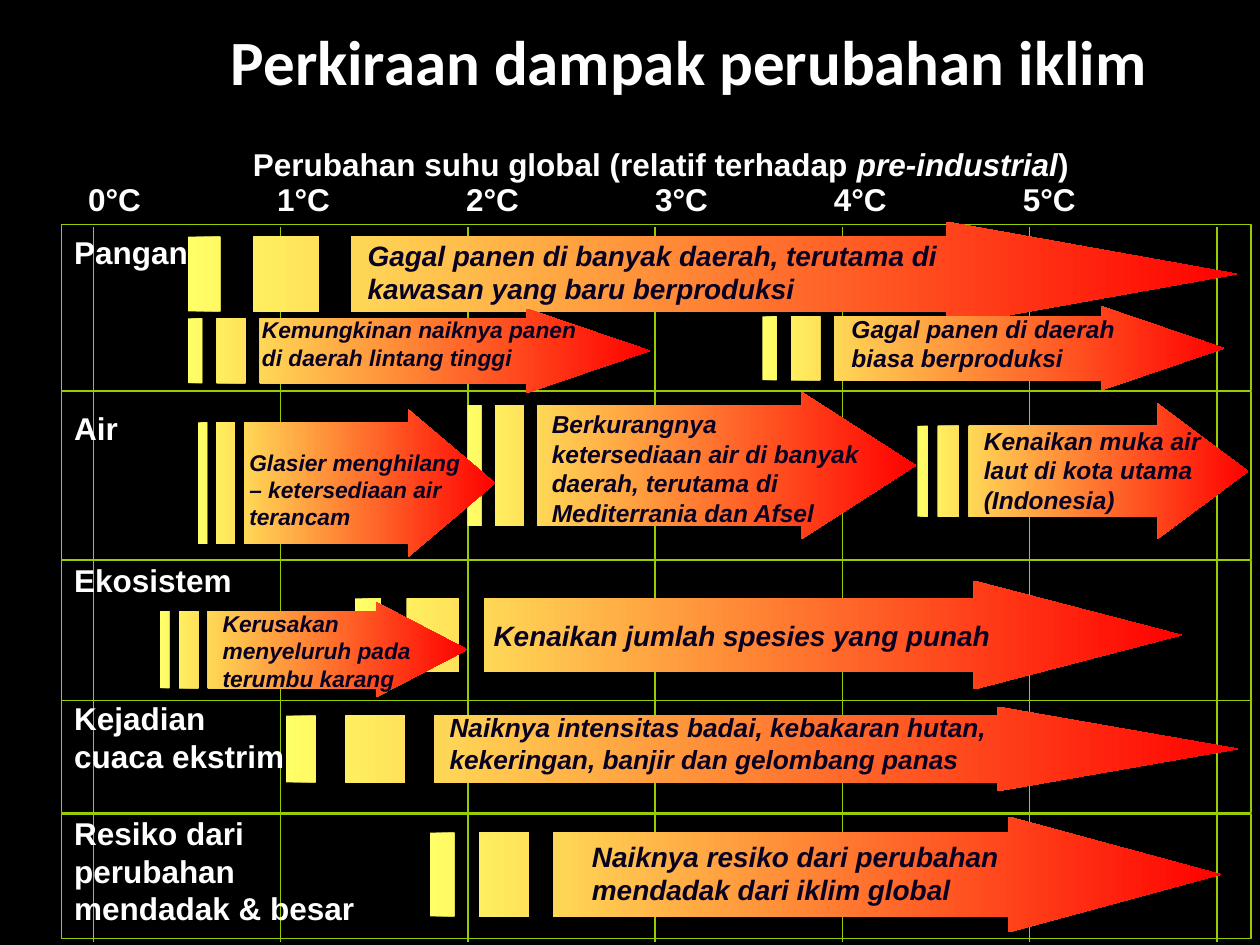
import dataclasses

import pptx
import pptx.dml.color
import pptx.enum.shapes
import pptx.enum.text
import pptx.oxml
import pptx.oxml.ns
import pptx.util

Pt = pptx.util.Pt

COLORS = {
    "background": "000000",
    "light": "FFFFFF",
    "dark": "090121",
    "grid": "99CC00",
    "cool": "FFFF66",
    "hot": "FF0000",
}


@dataclasses.dataclass
class Box:
    left: float
    top: float
    width: float
    height: float


@dataclasses.dataclass
class Category:
    name: str
    frame: Box
    label: Box


@dataclasses.dataclass
class Impact:
    text: str
    size: float
    label: Box
    arrow: Box
    head: float
    inset: float


FRAME_LEFT, FRAME_WIDTH = 35.3, 679.7

CATEGORIES = [
    Category("Pangan", Box(FRAME_LEFT, 128.2, FRAME_WIDTH, 95), Box(FRAME_LEFT, 129.6, 80, 29)),
    Category("Air", Box(FRAME_LEFT, 223.9, FRAME_WIDTH, 96), Box(FRAME_LEFT, 230.4, 80, 29)),
    Category("Ekosistem", Box(FRAME_LEFT, 320.4, FRAME_WIDTH, 80), Box(FRAME_LEFT, 316.8, 126, 29)),
    Category("Kejadian cuaca ekstrim", Box(FRAME_LEFT, 400.3, FRAME_WIDTH, 64), Box(FRAME_LEFT, 396, 144, 50.4)),
    Category("Resiko dari perubahan mendadak & besar",
             Box(FRAME_LEFT, 465.1, FRAME_WIDTH, 71.3), Box(FRAME_LEFT, 461.5, 185.8, 72)),
]

IMPACTS = [
    Impact("Naiknya resiko dari perubahan mendadak dari iklim global", 16,
           Box(331.2, 475.9, 293, 46), Box(245.5, 466.6, 452.2, 66.2), 576, 9.2),
    Impact("Kenaikan muka air laut di kota utama (Indonesia)", 14,
           Box(555.1, 239.8, 143.3, 57.6), Box(524.2, 230.4, 189, 77.8), 661.2, 13),
    Impact("Gagal panen di banyak daerah, terutama di kawasan yang baru berproduksi", 16,
           Box(203, 132.5, 354.2, 46), Box(107.3, 126.7, 599.8, 59.8), 540.7, 8.6),
    Impact("Gagal panen di daerah biasa berproduksi", 14,
           Box(479.5, 175.7, 180, 41), Box(435.6, 175, 264, 48), 629.3, 5.8),
    Impact("Berkurangnya ketersediaan air di banyak daerah, terutama di Mediterrania dan Afsel", 14,
           Box(308.2, 230.4, 190.8, 74.2), Box(267.1, 223.9, 256.3, 84.2), 457.9, 7.6),
    Impact("Kenaikan jumlah spesies yang punah", 16,
           Box(275, 349.9, 358.6, 26.6), Box(203, 331.9, 472.3, 62), 556.6, 10),
    Impact("Glasier menghilang – ketersediaan air terancam", 13,
           Box(135.4, 252.7, 136, 54), Box(113, 234, 170, 84.2), 233.3, 7.4),
    Impact("Kerusakan menyeluruh pada terumbu karang", 13,
           Box(120.2, 344.9, 139, 54), Box(91.4, 344.2, 175.7, 54), 215.3, 5),
    Impact("Naiknya intensitas badai, kebakaran hutan, kekeringan, banjir dan gelombang panas", 15,
           Box(249.8, 403.2, 392.4, 43.2), Box(163.4, 403.9, 544.3, 48.2), 570.2, 5),
    Impact("Kemungkinan naiknya panen di daerah lintang tinggi", 13,
           Box(142.6, 177.1, 206, 38.2), Box(107.3, 176.4, 264.2, 48.2), 301, 5.6),
]

DEGREE_LEFTS = [43.2, 151.2, 259.2, 367.2, 469.4, 577.4]


def rgb(name: str) -> pptx.dml.color.RGBColor:
    return pptx.dml.color.RGBColor.from_string(COLORS[name])


def points(box: Box) -> list:
    return [Pt(v) for v in (box.left, box.top, box.width, box.height)]


def add_run(p, text: str, *, size: float = 18, color: str = "light",
            font: str = "Arial", italic: bool = False) -> None:
    r = p.add_run()
    r.text = text
    r.font.name = font
    r.font.size = Pt(size)
    r.font.bold = True
    r.font.italic = italic
    r.font.color.rgb = rgb(color)


def add_label(s, box: Box, text: str, **fmt):
    tf = s.shapes.add_textbox(*points(box)).text_frame
    tf.word_wrap = True
    p = tf.paragraphs[0]
    add_run(p, text, **fmt)
    return p


def add_frame(s, box: Box) -> None:
    sp = s.shapes.add_shape(pptx.enum.shapes.MSO_SHAPE.RECTANGLE, *points(box))
    sp.shadow.inherit = False
    sp.fill.background()
    sp.line.color.rgb = rgb("grid")
    sp.line.width = Pt(0.75)


def add_grid(s, box: Box, rows: int, cols: int) -> None:
    table = s.shapes.add_table(rows, cols, *points(box)).table
    table.first_row = False
    table.horz_banding = False
    ns = pptx.oxml.ns.nsdecls("a")
    solid = f'<a:solidFill><a:srgbClr val="{COLORS["grid"]}"/></a:solidFill>'
    for cell in table.iter_cells():
        cell.fill.background()
        tcPr = cell._tc.get_or_add_tcPr()
        for i, side in enumerate("LRTB"):
            paint = solid if side in "LR" else "<a:noFill/>"
            tcPr.insert(i, pptx.oxml.parse_xml(f'<a:ln{side} {ns} w="{Pt(1)}">{paint}</a:ln{side}>'))


def add_striped_arrow(s, box: Box, head: float, inset: float) -> None:
    right, bottom = box.left + box.width, box.top + box.height
    upper, lower = box.top + inset, bottom - inset
    unit = box.width / 32
    body = box.left + 5 * unit
    outlines = [[(head, box.top), (head, upper), (body, upper), (body, lower),
                 (head, lower), (head, bottom), (right, box.top + box.height / 2)]]
    for start, end in ((2, 4), (0, 1)):
        x1, x2 = box.left + start * unit, box.left + end * unit
        outlines.append([(x1, upper), (x1, lower), (x2, lower), (x2, upper)])
    builder = None
    for outline in outlines:
        first, *rest = [(Pt(x), Pt(y)) for x, y in outline]
        if builder is None:
            builder = s.shapes.build_freeform(*first)
        else:
            builder.move_to(*first)
        builder.add_line_segments(rest, close=True)
    sp = builder.convert_to_shape()
    sp.shadow.inherit = False
    sp.line.fill.background()
    sp.fill.gradient()
    sp.fill.gradient_angle = 0
    for stop, color, position in zip(sp.fill.gradient_stops, ("cool", "hot"), (0, 1)):
        stop.color.rgb = rgb(color)
        stop.position = position


def main() -> None:
    prs = pptx.Presentation()
    prs.slide_width, prs.slide_height = Pt(720), Pt(540)
    s = prs.slides.add_slide(prs.slide_layouts[5])
    s.background.fill.solid()
    s.background.fill.fore_color.rgb = rgb("background")

    title = s.shapes.title
    title.left, title.top, title.width, title.height = points(Box(87.8, 18, 612, 41.8))
    tf = title.text_frame
    tf.vertical_anchor = pptx.enum.text.MSO_ANCHOR.BOTTOM
    tf.paragraphs[0].alignment = pptx.enum.text.PP_ALIGN.CENTER
    add_run(tf.paragraphs[0], "Perkiraan dampak perubahan iklim", size=36, font="Calibri")

    for category in CATEGORIES:
        add_frame(s, category.frame)
    add_grid(s, Box(53.3, 129.6, 642.2, 409), 8, 6)

    p = add_label(s, Box(137.5, 79.2, 504, 29), "Perubahan suhu global (relatif terhadap ")
    add_run(p, "pre-industrial", italic=True)
    add_run(p, ")")
    for degree, left in enumerate(DEGREE_LEFTS):
        add_label(s, Box(left, 99.4, 62, 29), f"{degree}°C")

    for impact in IMPACTS:
        add_striped_arrow(s, impact.arrow, impact.head, impact.inset)
        add_label(s, impact.label, impact.text, size=impact.size, color="dark", italic=True)
    for category in CATEGORIES:
        add_label(s, category.label, category.name)

    prs.save("out.pptx")


if __name__ == "__main__":
    main()
